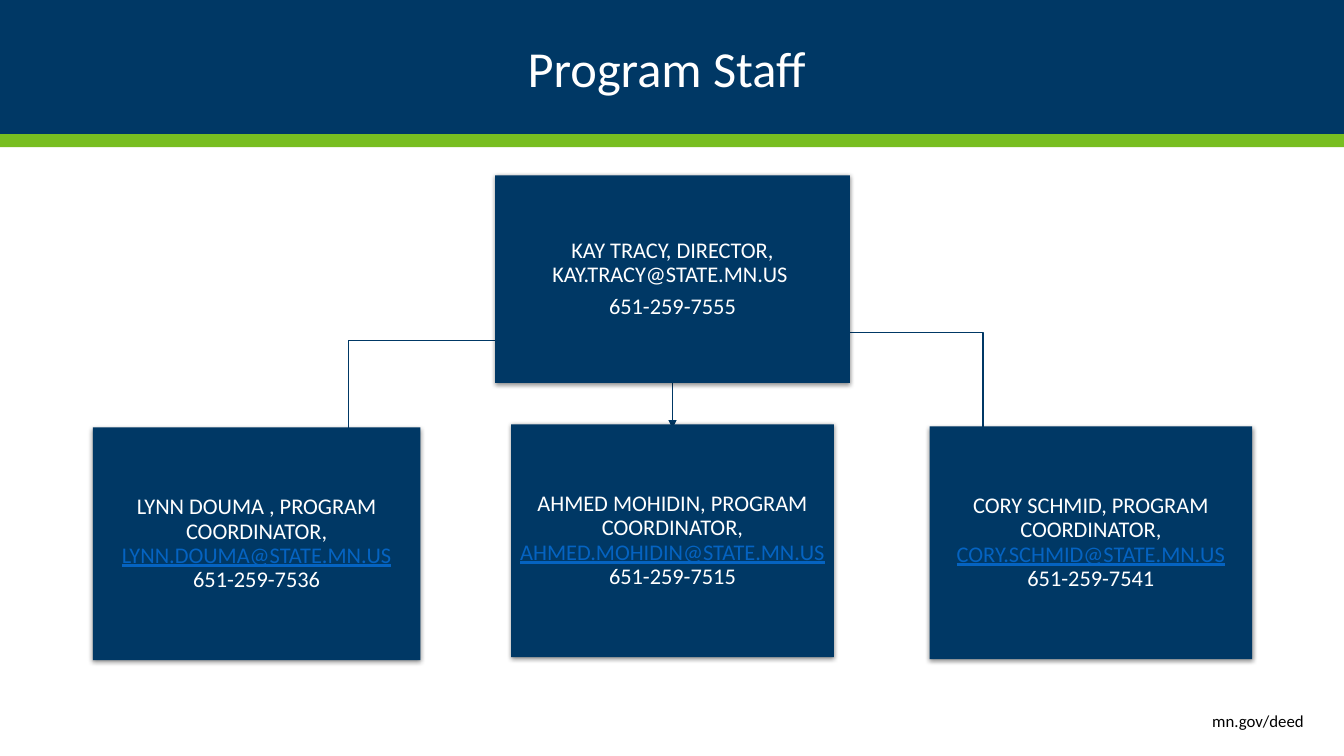
from lxml import etree
from pptx import Presentation
from pptx.dml.color import RGBColor
from pptx.enum import shapes, text
from pptx.oxml import parse_xml
from pptx.oxml.ns import nsdecls, qn
from pptx.util import Inches, Pt

COLORS = {"navy": "003865", "green": "78BE21", "white": "FFFFFF",
          "black": "000000", "link": "0563C1"}
rgb = {name: RGBColor.from_string(value) for name, value in COLORS.items()}


def add_rect(left, top, width, height, color):
    sp = s.shapes.add_shape(shapes.MSO_SHAPE.RECTANGLE, Inches(left), Inches(top),
                            Inches(width), Inches(height))
    sp.shadow.inherit = False
    sp.fill.solid()
    sp.fill.fore_color.rgb = rgb[color]
    sp.line.fill.background()
    return sp


def style_paragraph(p, size, color, align):
    p.font.name = "Calibri"
    p.font.size = Pt(size)
    p.font.color.rgb = rgb[color]
    p.alignment = align


prs = Presentation()
prs.slide_width, prs.slide_height = Inches(13.33), Inches(7.5)
s = prs.slides.add_slide(prs.slide_layouts[6])

# Header band, title and footer
add_rect(0, 0, 13.33, 1.33, "navy")
add_rect(0, 1.33, 13.33, 0.13, "green")

captions = [
    ("Program Staff ", 0.92, 0, 11.5, 1.33, 36, "white", text.PP_ALIGN.CENTER),
    ("mn.gov/deed", 6.92, 6.95, 6.11, 0.4, 12, "black", text.PP_ALIGN.RIGHT),
]
for caption, left, top, width, height, size, color, align in captions:
    tf = s.shapes.add_textbox(Inches(left), Inches(top), Inches(width),
                              Inches(height)).text_frame
    tf.word_wrap = True
    tf.vertical_anchor = text.MSO_ANCHOR.MIDDLE
    p = tf.paragraphs[0]
    p.text = caption
    style_paragraph(p, size, color, align)

# Connectors run behind the boxes; the elbows are turned to leave vertically
ELBOW, STRAIGHT = shapes.MSO_CONNECTOR.ELBOW, shapes.MSO_CONNECTOR.STRAIGHT
connectors = [
    (ELBOW, 3.29, 2.6, 5.19, 4.16, 90),
    (ELBOW, 10.29, 2.58, 7.78, 4.01, 270),
    (STRAIGHT, 6.67, 3.75, 6.67, 4.25, 0),
]
for kind, x1, y1, x2, y2, degrees in connectors:
    c = s.shapes.add_connector(kind, Inches(x1), Inches(y1), Inches(x2), Inches(y2))
    c.line.color.rgb = rgb["navy"]
    c.line.width = Pt(0.75)
    spPr = c._element.spPr
    if degrees:
        spPr.find(qn("a:xfrm")).set("rot", str(degrees * 60000))
    etree.SubElement(spPr.find(qn("a:ln")), qn("a:tailEnd"), type="triangle")
    etree.SubElement(spPr, qn("a:effectLst"))

# Staff boxes: position, then paragraphs of (text, is_link) runs
staff = [
    (4.91, 1.74, 3.52, 2.06,
     [[("KAY TRACY, DIRECTOR, KAY.TRACY@STATE.MN.US ", False)],
      [("651-259-7555", False)]]),
]
coordinators = [
    (9.22, 4.23, 3.2, "CORY SCHMID", "CORY.SCHMID", "7541"),
    (5.07, 4.21, 3.2, "AHMED MOHIDIN", "AHMED.MOHIDIN", "7515"),
    (0.92, 4.24, 3.25, "LYNN DOUMA ", "LYNN.DOUMA", "7536"),
]
for left, top, width, name, user, extension in coordinators:
    runs = [(f"{name}, PROGRAM COORDINATOR, ", False),
            (f"{user}@STATE.MN.US", True),
            (f" 651-259-{extension}", False)]
    staff.append((left, top, width, 2.31, [runs]))

SHADOW = (f'<a:effectLst {nsdecls("a")}><a:outerShdw blurRad="{Pt(3.5)}" '
          f'dist="{Pt(1.1)}" dir="5400000" algn="ctr" rotWithShape="0">'
          f'<a:srgbClr val="{COLORS["black"]}"><a:alpha val="45000"/></a:srgbClr>'
          '</a:outerShdw></a:effectLst>')

for left, top, width, height, paragraphs in staff:
    sp = add_rect(left, top, width, height, "navy")
    spPr = sp._element.spPr
    spPr.replace(spPr.find(qn("a:effectLst")), parse_xml(SHADOW))
    tf = sp.text_frame
    tf.word_wrap = True
    tf.vertical_anchor = text.MSO_ANCHOR.MIDDLE
    tf.margin_left = tf.margin_right = tf.margin_top = tf.margin_bottom = Inches(0.07)
    for i, runs in enumerate(paragraphs):
        p = tf.add_paragraph() if i else tf.paragraphs[0]
        style_paragraph(p, 16, "white", text.PP_ALIGN.CENTER)
        p.line_spacing = 0.9
        p.space_after = Pt(5.6)
        for content, is_link in runs:
            r = p.add_run()
            r.text = content
            if is_link:
                r.font.color.rgb = rgb["link"]
                r.font.underline = True

prs.save("out.pptx")
